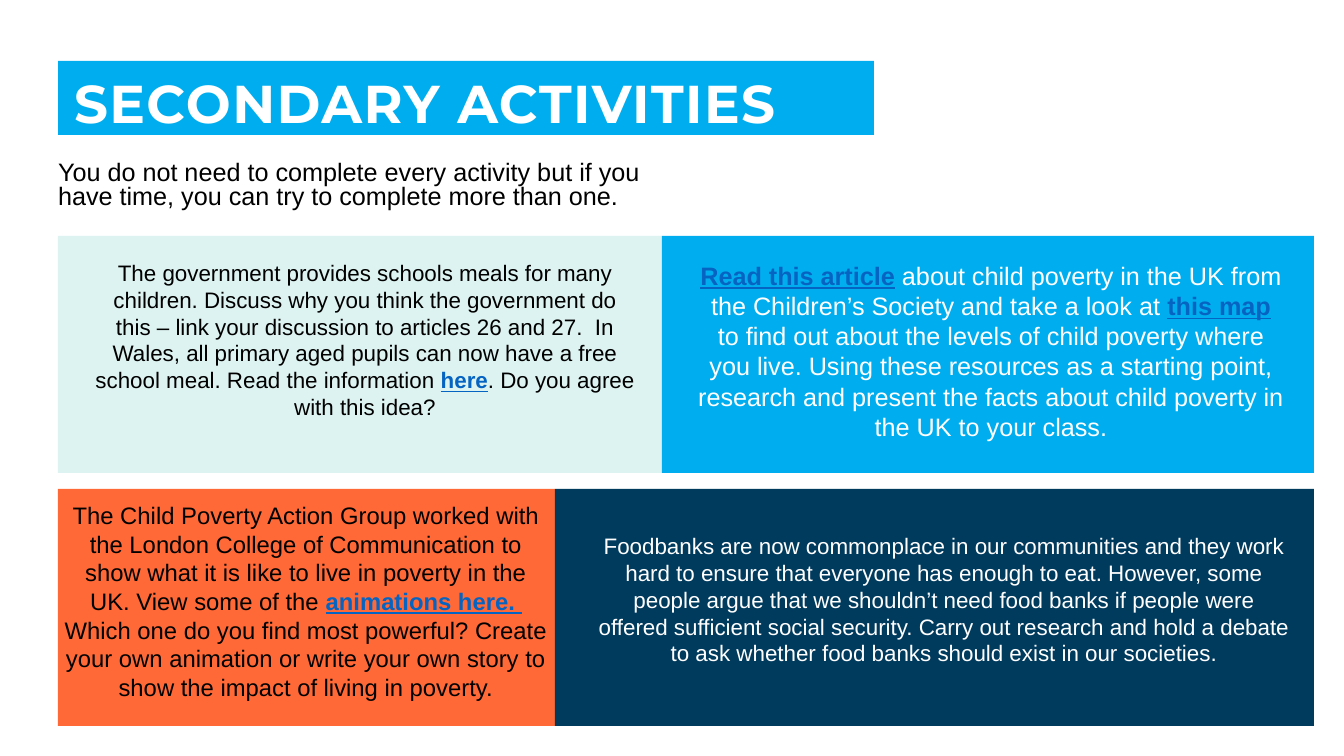
from pptx import Presentation
from pptx.dml.color import RGBColor
from pptx.enum.shapes import MSO_SHAPE
from pptx.enum.text import MSO_ANCHOR, MSO_AUTO_SIZE, PP_ALIGN
from pptx.oxml.ns import qn
from pptx.util import Pt
from lxml.etree import SubElement

PX = 914400 / 100.8
BLACK, WHITE, LINK = "000000", "FFFFFF", "0563C1"
MINT, ORANGE, BLUE, NAVY = "DDF3F1", "FF6937", "00AEEF", "003B5E"

# Panel rows: left edge, right edge, top and height in px
LEFT, RIGHT, PANEL_HEIGHT = 58, 1314, 237
ROW_TOPS = (236, 489)
SPLITS = (662, 555)


def px(length):
    return round(length * PX)


def colour(hex_string):
    return RGBColor.from_string(hex_string)


def place(shape, box):
    shape.left, shape.top, shape.width, shape.height = map(px, box)


def set_frame(frame, insets, anchor=MSO_ANCHOR.TOP):
    frame.word_wrap = True
    frame.auto_size = MSO_AUTO_SIZE.NONE
    frame.vertical_anchor = anchor
    (frame.margin_left, frame.margin_top,
     frame.margin_right, frame.margin_bottom) = map(px, insets)


def add_span(para, text, size, hex_string, font="Arial", bold=False):
    span = para.add_run()
    span.text = text
    span.font.name = font
    span.font.size = Pt(size)
    span.font.bold = bold
    span.font.color.rgb = colour(hex_string)
    return span


def add_title(page, box):
    title = page.shapes.title
    place(title, box)
    title.fill.solid()
    title.fill.fore_color.rgb = colour(BLUE)
    set_frame(title.text_frame, (16, 16, 12, 0), MSO_ANCHOR.MIDDLE)
    para = title.text_frame.paragraphs[0]
    para.alignment = PP_ALIGN.LEFT
    para.line_spacing = 0.9
    span = add_span(para, "SECONDARY ACTIVITIES", 38, WHITE, "Montserrat", True)
    span.font._element.set("spc", "100")


def add_intro(page, box):
    intro = page.placeholders[1]
    place(intro, box)
    set_frame(intro.text_frame, (0, 5, 10, 5))
    para = intro.text_frame.paragraphs[0]
    properties = para._p.get_or_add_pPr()
    properties.set("marL", "0")
    properties.set("indent", "0")
    SubElement(properties, qn("a:buNone"))
    para.line_spacing = 0.8
    para.space_before = Pt(0)
    add_span(para, "You do not need to complete every activity but if you "
             "have time, you can try to complete more than one.", 18, BLACK)


def add_panel(page, box, fill, text_box, size, ink, paragraphs):
    """text_box is relative to the panel; spans flagged True look like links."""
    panel = page.shapes.add_shape(MSO_SHAPE.RECTANGLE, *map(px, box))
    panel.shadow.inherit = False
    panel.fill.solid()
    panel.fill.fore_color.rgb = colour(fill)
    panel.line.fill.background()

    left, top, width, height = text_box
    text = page.shapes.add_textbox(
        *map(px, (box[0] + left, box[1] + top, width, height)))
    frame = text.text_frame
    set_frame(frame, (10, 5, 10, 5))
    for index, spans in enumerate(paragraphs):
        para = frame.add_paragraph() if index else frame.paragraphs[0]
        para.alignment = PP_ALIGN.CENTER
        for words, is_link in spans:
            span = add_span(para, words, size, LINK if is_link else ink, bold=is_link)
            span.font.underline = is_link


# Each row holds two panels: fill, relative text box, size, ink, paragraphs
PANEL_ROWS = [
    [
        (MINT, (26, 18, 562, 173), 16, BLACK, [[
            ("The government provides schools meals for many children. Discuss "
             "why you think the government do this – link your discussion to "
             "articles 26 and 27.  In Wales, all primary aged pupils can now "
             "have a free school meal. Read the information ", False),
            ("here", True),
            (". Do you agree with this idea?", False)]]),
        (BLUE, (26, 19, 606, 194), 18, WHITE, [[
            ("Read this article", True),
            (" about child poverty in the UK from the Children’s Society and "
             "take a look at ", False),
            ("this map", True),
            (" to find out about the levels of child poverty where you live. "
             "Using these resources as a starting point, research and present "
             "the facts about child poverty in the UK to your class.", False)]]),
    ],
    [
        (ORANGE, (-4, 7, 504, 212), 17, BLACK, [
            [("The Child Poverty Action Group worked with the London College of "
              "Communication to show what it is like to live in poverty in the "
              "UK. View some of the ", False),
             ("animations here. ", True)],
            [("Which one do you find most powerful? Create your own animation "
              "or write your own story to show the impact of living in "
              "poverty.", False)]]),
        (NAVY, (31, 38, 716, 146), 16, WHITE, [[
            ("Foodbanks are now commonplace in our communities and they work "
             "hard to ensure that everyone has enough to eat. However, some "
             "people argue that we shouldn’t need food banks if people were "
             "offered sufficient social security. Carry out research and hold a "
             "debate to ask whether food banks should exist in our societies.",
             False)]]),
    ],
]


def build_activities(deck):
    page = deck.slides.add_slide(deck.slide_layouts[1])
    add_title(page, (LEFT, 61, 816, 74))
    add_intro(page, (LEFT, 157, 626, 62))
    for top, split, panels in zip(ROW_TOPS, SPLITS, PANEL_ROWS):
        edges = (LEFT, split, RIGHT)
        for start, end, panel in zip(edges, edges[1:], panels):
            add_panel(page, (start, top, end - start, PANEL_HEIGHT), *panel)


def main():
    deck = Presentation()
    deck.slide_width, deck.slide_height = px(1344), px(756)
    build_activities(deck)
    deck.save("out.pptx")


if __name__ == "__main__":
    main()
